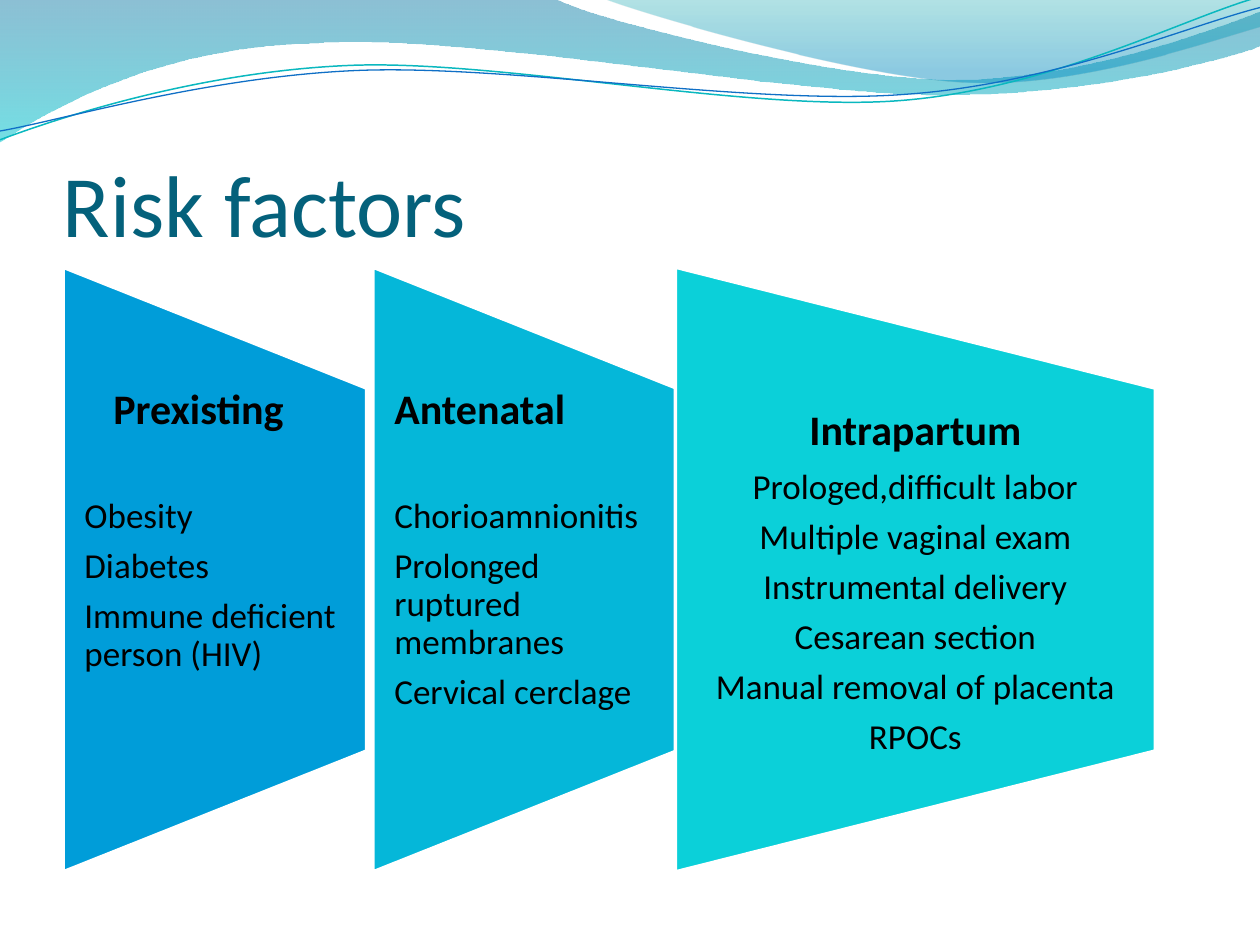
from lxml.etree import SubElement
from pptx import Presentation
from pptx.dml.color import RGBColor
from pptx.enum.shapes import MSO_SHAPE as Preset
from pptx.enum.text import MSO_ANCHOR as Anchor, PP_ALIGN as Align
from pptx.oxml.ns import qn
from pptx.util import Inches, Pt

WIDTH, HEIGHT = Inches(10), Inches(7.5)
CELL = WIDTH / 10
FONT = "Calibri"

BLACK = RGBColor(0x00, 0x00, 0x00)
WHITE = RGBColor(0xFF, 0xFF, 0xFF)
TITLE_TEAL = RGBColor(0x04, 0x61, 0x7B)
BLUE = RGBColor(0x00, 0x9D, 0xD9)
SKY = RGBColor(0x05, 0xB7, 0xD9)
TURQUOISE = RGBColor(0x0B, 0xD0, 0xD9)
TEAL_LINE = RGBColor(0x0A, 0xB8, 0xBF)
BLUE_LINE = RGBColor(0x0F, 0x6F, 0xC6)
DEEP_BLUE = RGBColor(0x00, 0x74, 0xA1)
CYAN = RGBColor(0x00, 0xC6, 0xCF)
SEA_GREEN = RGBColor(0x00, 0xA1, 0xA9)
STEEL_BLUE = RGBColor(0x00, 0x8B, 0xBF)

BROAD_WAVE = [
    (0, 0), (4.4, -0.01), (4.76, 0.17, 6.64, 0.63, 7.58, 0.63),
    (8.53, 0.63, 9.58, 0.26, 10, 0.09), (10.01, 0.36),
    (9.83, 0.44, 8.7, 0.76, 7.46, 0.75), (6.22, 0.75, 3.82, 0.28, 2.57, 0.34),
    (1.29, 0.36, 0.46, 0.83, -0.01, 1.13), (0, 0),
]
RIGHT_WAVE = [
    (4.79, -0.01), (5.09, 0.11, 6.82, 0.62, 7.69, 0.65),
    (8.56, 0.69, 9.61, 0.32, 10, 0.21), (10, 0), (4.79, -0.01),
]
TEAL_THREAD = [
    (0, 1.11), (0.48, 0.93, 1.58, 0.57, 2.77, 0.52),
    (3.95, 0.47, 5.93, 0.89, 7.13, 0.8), (8.33, 0.71, 9.38, 0.15, 9.98, -0.02),
]
BLUE_THREAD = [
    (0, 1.04), (0.47, 0.96, 1.64, 0.61, 2.83, 0.56),
    (4.03, 0.51, 5.97, 0.84, 7.17, 0.75), (8.36, 0.67, 9.41, 0.21, 10, 0.06),
]
WAVES = [
    (BROAD_WAVE, [(0, DEEP_BLUE, 45), (1, CYAN, 55)]),
    (RIGHT_WAVE, [(0, SEA_GREEN, 30), (0.8, STEEL_BLUE, 45)]),
]
THREADS = [(TEAL_THREAD, TEAL_LINE, 0.85), (BLUE_THREAD, BLUE_LINE, 0.75)]

PANELS = [
    dict(box=(0.5, 2.12, 2.41, 4.8), color=BLUE, heading="Prexisting",
         factors=["Obesity", "Diabetes", "Immune deficient person (HIV)"],
         indent=0.23),
    dict(box=(2.96, 2.12, 2.41, 4.8), color=SKY, heading="Antenatal",
         factors=["Chorioamnionitis", "Prolonged ruptured membranes",
                  "Cervical cerclage"]),
    dict(box=(5.36, 2.12, 3.81, 4.8), color=TURQUOISE, heading="Intrapartum",
         factors=["Prologed,difficult labor", "Multiple vaginal exam",
                  "Instrumental delivery", "Cesarean section",
                  "Manual removal of placenta", "RPOCs"],
         align=Align.CENTER, heading_gap=8, drop=0.17),
]


def cells(*counts):
    """Turn grid counts into slide lengths."""
    return [round(count * CELL) for count in counts]


def add_outline(slide, segments, closed):
    """Draw a freeform from straight (x, y) and cubic (six-number) segments."""
    start, *rest = segments
    points = [cells(*segment[at:at + 2])
              for segment in rest for at in range(0, len(segment), 2)]
    builder = slide.shapes.build_freeform(*cells(*start))
    builder.add_line_segments(points, close=closed)
    outline = builder.convert_to_shape()
    outline.shadow.inherit = False
    steps = iter(list(outline.element.iter(qn("a:lnTo"))))
    for segment in rest:
        curve = next(steps)
        if len(segment) == 6:
            curve.tag = qn("a:cubicBezTo")
            for _ in range(2):
                step = next(steps)
                curve.append(step[0])
                step.getparent().remove(step)
    return outline


def add_header(slide):
    """Draw the translucent waves and thin threads along the top edge."""
    for segments, stops in WAVES:
        wave = add_outline(slide, segments, True)
        wave.line.fill.background()
        wave.fill.gradient()
        wave.fill.gradient_angle = 270
        for stop, (position, color, _) in zip(wave.fill.gradient_stops, stops):
            stop.position = position
            stop.color.rgb = color
        tints = wave.element.spPr.iter(qn("a:srgbClr"))
        for tint, (_, _, opacity) in zip(tints, stops):
            SubElement(tint, qn("a:alpha")).set("val", str(opacity * 1000))
    for segments, color, weight in THREADS:
        thread = add_outline(slide, segments, False)
        thread.fill.background()
        thread.line.color.rgb = color
        thread.line.width = Pt(weight)


def add_text_frame(slide, box, margins, anchor):
    """Add a wrapping text box and return its frame."""
    frame = slide.shapes.add_textbox(*cells(*box)).text_frame
    frame.word_wrap = True
    frame.vertical_anchor = anchor
    (frame.margin_left, frame.margin_top,
     frame.margin_right, frame.margin_bottom) = cells(*margins)
    return frame


def add_run(paragraph, text, size, color, bold=False):
    """Append one styled run."""
    run = paragraph.add_run()
    run.text = text
    run.font.name = FONT
    run.font.size = Pt(size)
    run.font.bold = bold
    run.font.color.rgb = color


def add_title(slide, box, text):
    """Place the slide title at the foot of its box."""
    frame = add_text_frame(slide, box, (0, 0.05, 0, 0), Anchor.BOTTOM)
    add_run(frame.paragraphs[0], text, 50, TITLE_TEAL)


def add_panel(slide, box, color, heading, factors, align=Align.LEFT,
              heading_gap=37, drop=0, indent=0):
    """Draw a tapering panel with a heading and its risk factors."""
    left, top, width, height = box
    turned = (left + (width - height) / 2, top + (height - width) / 2, height, width)
    panel = slide.shapes.add_shape(Preset.FLOWCHART_MANUAL_OPERATION, *cells(*turned))
    panel.rotation = 270
    panel.shadow.inherit = False
    panel.fill.solid()
    panel.fill.fore_color.rgb = color
    panel.line.color.rgb = WHITE
    panel.line.width = Pt(2)

    frame = add_text_frame(slide, (left, top + height / 5, width, height * 0.6),
                           (0.17, drop, 0.17, 0), Anchor.TOP)
    for index, text in enumerate([heading, *factors]):
        is_heading = index == 0
        paragraph = frame.paragraphs[0] if is_heading else frame.add_paragraph()
        paragraph.alignment = align
        paragraph.line_spacing = 0.9
        paragraph.space_after = Pt(heading_gap if is_heading else 7)
        if is_heading and indent:
            paragraph._p.get_or_add_pPr().set("marL", str(cells(indent)[0]))
        add_run(paragraph, text, 24 if is_heading else 20, BLACK, is_heading)


def main():
    """Build the risk factors slide."""
    deck = Presentation()
    deck.slide_width, deck.slide_height = WIDTH, HEIGHT
    slide = deck.slides.add_slide(deck.slide_layouts[6])
    add_header(slide)
    add_title(slide, (0.5, 0.77, 9, 1.25), "Risk factors")
    for panel in PANELS:
        add_panel(slide, **panel)
    deck.save("out.pptx")


if __name__ == "__main__":
    main()
